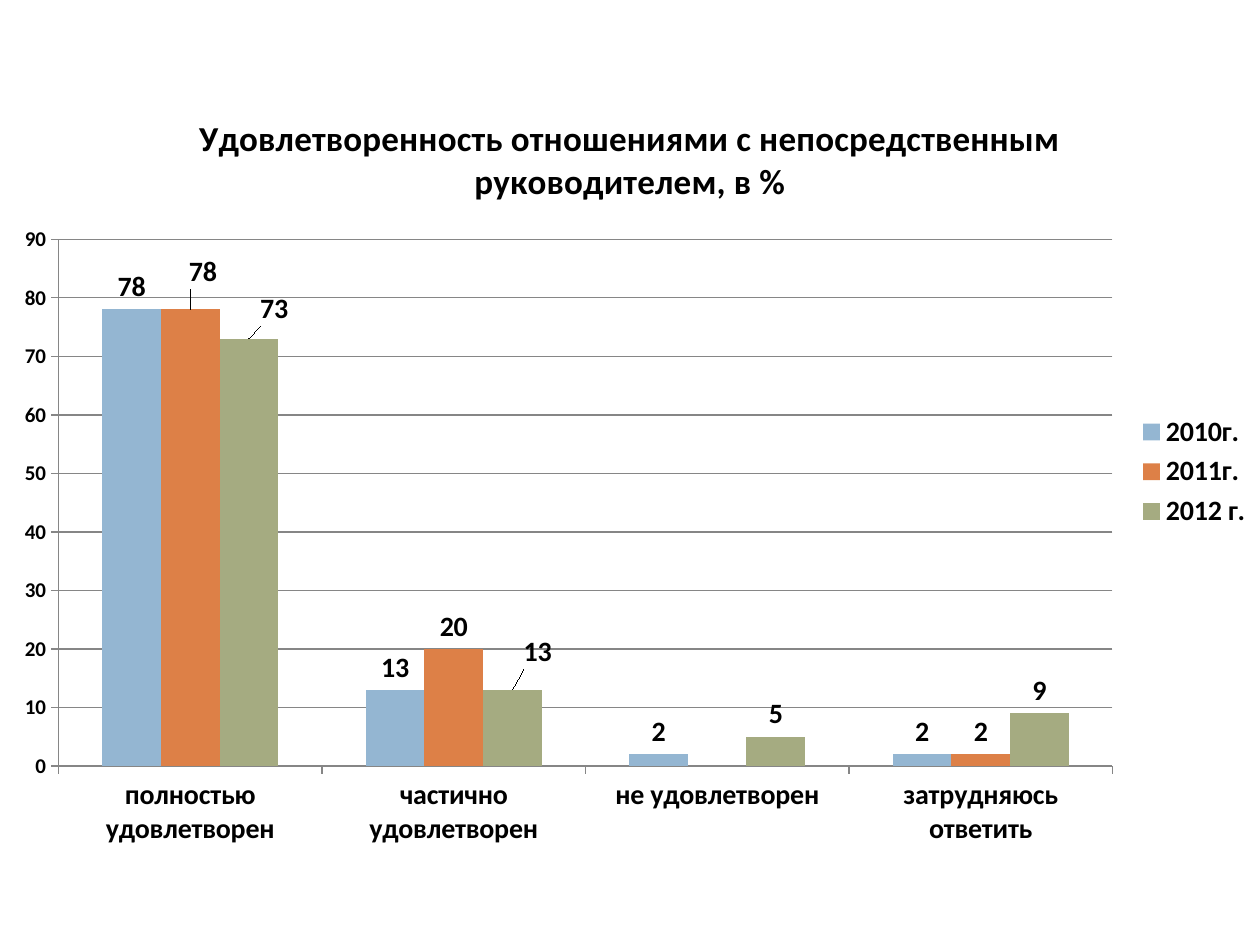
from pptx import Presentation
from pptx.chart.data import CategoryChartData
from pptx.dml.color import RGBColor
from pptx.enum.chart import XL_CHART_TYPE, XL_LABEL_POSITION, XL_LEGEND_POSITION, XL_TICK_MARK
from pptx.oxml import parse_xml
from pptx.oxml.ns import nsdecls, qn
from pptx.util import Cm, Pt

COLUMNS = XL_CHART_TYPE.COLUMN_CLUSTERED
LABEL_ABOVE = XL_LABEL_POSITION.OUTSIDE_END
LEGEND_RIGHT = XL_LEGEND_POSITION.RIGHT
TICK_OUTSIDE = XL_TICK_MARK.OUTSIDE

BLACK = RGBColor(0x00, 0x00, 0x00)
GRAY = RGBColor(0x86, 0x86, 0x86)
BLUE = RGBColor(0x94, 0xB6, 0xD2)
ORANGE = RGBColor(0xDD, 0x80, 0x47)
OLIVE = RGBColor(0xA5, 0xAB, 0x81)

TITLE = "Удовлетворенность отношениями с непосредственным руководителем, в %"
ANSWERS = ["полностью удовлетворен", "частично удовлетворен",
           "не удовлетворен", "затрудняюсь ответить"]
YEARS = [
    {"name": "2010г.", "values": (78, 13, 2, 2), "color": BLUE, "shifts": {}},
    {"name": "2011г.", "values": (78, 20, None, 2), "color": ORANGE,
     "shifts": {0: (0.01, -0.02)}},
    {"name": "2012 г.", "values": (73, 13, 5, 9), "color": OLIVE,
     "shifts": {0: (0.02, -0.01), 1: (0.02, -0.02)}},
]
PLOT_LAYOUT = {"layoutTarget": "inner", "xMode": "edge", "yMode": "edge",
               "x": 0.05, "y": 0.2, "w": 0.83, "h": 0.68}


def format_font(font, size=16, color=BLACK):
    font.name = "Calibri"
    font.size = Pt(size)
    font.bold = True
    font.color.rgb = color


def add_title(chart, text, **font_format):
    frame = chart.chart_title.text_frame
    span = frame.paragraphs[0].add_run()
    span.text = text
    format_font(span.font, **font_format)
    chart.chart_title.include_in_layout = False


def manual_layout(**settings):
    items = "".join(f'<c:{key} val="{value}"/>' for key, value in settings.items())
    return parse_xml(f'<c:layout {nsdecls("c")}><c:manualLayout>{items}'
                     '</c:manualLayout></c:layout>')


def draw_line(line):
    line.color.rgb = GRAY
    line.width = Pt(0.75)


def format_series(series, color, shifts):
    series.format.fill.solid()
    series.format.fill.fore_color.rgb = color
    labels = series.data_labels
    labels.show_value = True
    labels.position = LABEL_ABOVE
    format_font(labels.font)
    for index, (x, y) in shifts.items():
        label = series.points[index].data_label
        format_font(label.font)
        label.position = LABEL_ABOVE
    for node in series._element.iter(qn("c:dLbl")):
        mark = node.find(qn("c:idx"))
        x, y = shifts[int(mark.get("val"))]
        mark.addnext(manual_layout(x=x, y=y))


def add_survey_chart(page):
    data = CategoryChartData()
    data.categories = ANSWERS
    for year in YEARS:
        data.add_series(year["name"], year["values"])
    chart = page.shapes.add_chart(COLUMNS, Cm(-0.1), Cm(1.7), Cm(25.6), Cm(15.62), data).chart
    format_font(chart.font)
    add_title(chart, TITLE, size=20)

    chart.has_legend = True
    chart.legend.position = LEGEND_RIGHT
    chart.legend.include_in_layout = False
    format_font(chart.legend.font)

    for axis, size in ((chart.category_axis, 16), (chart.value_axis, 12)):
        axis.major_tick_mark = TICK_OUTSIDE
        format_font(axis.tick_labels.font, size=size)
        draw_line(axis.format.line)
    chart.value_axis.minimum_scale = 0
    chart.value_axis.maximum_scale = 90
    chart.value_axis.major_unit = 10
    draw_line(chart.value_axis.major_gridlines.format.line)

    plot = chart.plots[0]
    plot.gap_width = 150
    plot.overlap = 0
    plot.vary_by_categories = False
    for series, year in zip(plot.series, YEARS):
        format_series(series, year["color"], year["shifts"])

    area = chart._chartSpace.chart.plotArea
    for layout in area.findall(qn("c:layout")):
        area.remove(layout)
    area.insert(0, manual_layout(**PLOT_LAYOUT))


def main():
    deck = Presentation()
    deck.slide_width, deck.slide_height = Cm(25.4), Cm(19.05)
    page = deck.slides.add_slide(deck.slide_layouts[6])
    add_survey_chart(page)
    deck.save("out.pptx")


if __name__ == "__main__":
    main()
